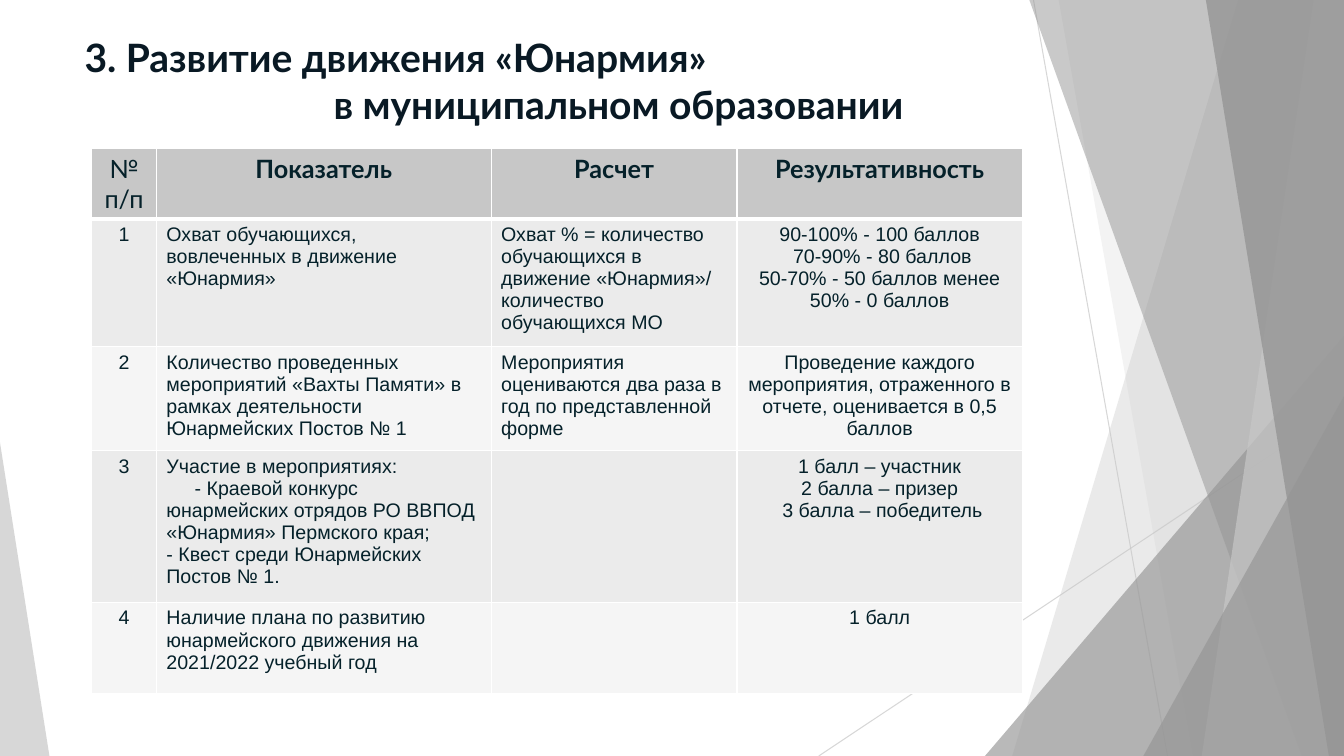
from pptx import Presentation
from pptx.dml.color import RGBColor
from pptx.enum.shapes import MSO_CONNECTOR as Connector, MSO_SHAPE as Shape
from pptx.enum.text import MSO_ANCHOR as Anchor, PP_ALIGN as Align
from pptx.oxml.ns import qn
from pptx.util import Inches, Pt
from lxml.etree import SubElement

LIGHT, DARK, WHITE = "C7C7C7", "959595", "FFFFFF"


def color(code):
    return RGBColor.from_string(code)


class Page:
    """Draws on one slide; all lengths are percentages of its size."""

    title_style = {"font": "Lato", "size": 27.9, "ink": "091924", "bold": True}
    head_style = {"font": "Lato", "size": 18, "ink": "05212A", "bold": True}
    body_style = {"font": "Arial", "size": 14, "ink": "05212A", "bold": False}

    def __init__(self, deck):
        self.width, self.height = deck.slide_width, deck.slide_height
        self.shapes = deck.slides.add_slide(deck.slide_layouts[6]).shapes

    def x(self, share):
        return round(self.width * share / 100)

    def y(self, share):
        return round(self.height * share / 100)

    def box(self, left, top, width, height):
        return self.x(left), self.y(top), self.x(width), self.y(height)

    def fade(self, fill, opacity):
        tint = fill._xPr.find(qn("a:solidFill"))[0]
        SubElement(tint, qn("a:alpha"), val=str(opacity * 1000))

    def paint(self, shape, code, opacity):
        shape.shadow.inherit = False
        shape.fill.solid()
        shape.fill.fore_color.rgb = color(code)
        self.fade(shape.fill, opacity)
        shape.line.fill.background()

    def ray(self, x1, y1, x2, y2):
        line = self.shapes.add_connector(
            Connector.STRAIGHT, self.x(x1), self.y(y1), self.x(x2), self.y(y2))
        line.line.width = Pt(0.75)
        line.line.color.rgb = color(LIGHT)
        self.fade(line.line.fill, 70)
        SubElement(line._element.spPr, qn("a:effectLst"))

    def facet(self, top_left, bottom_left, code, opacity):
        """Full-height panel reaching the right edge of the slide."""
        outline = self.shapes.build_freeform(self.x(top_left), 0)
        outline.add_line_segments([
            (self.width, 0), (self.width, self.height),
            (self.x(bottom_left), self.height)], close=True)
        self.paint(outline.convert_to_shape(), code, opacity)

    def triangle(self, left, top, width, apex, code, opacity):
        """Triangle standing on the bottom edge of the slide."""
        shape = self.shapes.add_shape(
            Shape.ISOSCELES_TRIANGLE, *self.box(left, top, width, 100 - top))
        shape.adjustments[0] = apex
        self.paint(shape, code, opacity)

    def add_lines(self, frame, lines, style, align=Align.LEFT):
        """Each line is a text or a (text, left margin, first-line indent)."""
        for number, line in enumerate(lines):
            text, margin, indent = (line, 0, 0) if isinstance(line, str) else line
            para = frame.add_paragraph() if number else frame.paragraphs[0]
            para.alignment = align
            settings = para._p.get_or_add_pPr()
            settings.set("marL", str(self.x(margin)))
            settings.set("indent", str(self.x(indent)))
            span = para.add_run()
            span.text = text
            span.font.name, span.font.size = style["font"], Pt(style["size"])
            span.font.bold = style["bold"]
            span.font.color.rgb = color(style["ink"])

    def title(self, area, lines):
        frame = self.shapes.add_textbox(*self.box(*area)).text_frame
        frame.word_wrap = True
        frame.vertical_anchor = Anchor.TOP
        self.add_lines(frame, lines, self.title_style)

    def border(self, cell, edges):
        settings = cell._tc.get_or_add_tcPr()
        for side, points in edges.items():
            edge = SubElement(settings, qn(f"a:ln{side}"), w=str(Pt(points)))
            SubElement(SubElement(edge, qn("a:solidFill")), qn("a:srgbClr"), val=WHITE)

    def table(self, left, top, widths, heights, rows):
        table = self.shapes.add_table(
            len(rows), len(widths),
            *self.box(left, top, sum(widths), sum(heights))).table
        table.first_row = table.horz_banding = False
        for column, width in zip(table.columns, widths):
            column.width = self.x(width)
        for row, height in zip(table.rows, heights):
            row.height = self.y(height)

        for r, row in enumerate(rows):
            for c, lines in enumerate(row):
                cell = table.cell(r, c)
                self.border(cell, {"L": 1, "R": 1, "T": 3 if r == 1 else 1,
                                   "B": 3 if r == 0 else 1})
                cell.fill.solid()
                band = "EBEBEB" if r % 2 else "F5F5F5"
                cell.fill.fore_color.rgb = color(band if r else LIGHT)
                style = self.body_style if r else {**self.head_style, "bold": c > 0}
                centred = r == 0 or c in (0, 3)
                self.add_lines(cell.text_frame, lines, style,
                               Align.CENTER if centred else Align.LEFT)


ROWS = [
    [["№ п/п"], ["Показатель"], ["Расчет"], ["Результативность"]],
    [["1"],
     ["Охват обучающихся, вовлеченных в движение «Юнармия»"],
     ["Охват % = количество обучающихся в движение «Юнармия»/ "
      "количество обучающихся МО"],
     ["90-100% - 100 баллов", " 70-90% - 80 баллов",
      "50-70% - 50 баллов менее 50% - 0 баллов"]],
    [["2"],
     ["Количество проведенных мероприятий «Вахты Памяти» в рамках "
      "деятельности Юнармейских Постов № 1"],
     ["Мероприятия оцениваются два раза в год по представленной форме"],
     ["Проведение каждого мероприятия, отраженного в отчете, "
      "оценивается в 0,5 баллов"]],
    [["3"],
     ["Участие в мероприятиях:",
      ("- Краевой конкурс юнармейских отрядов РО ВВПОД «Юнармия» "
       "Пермского края;", 0, 2.1),
      "- Квест среди Юнармейских Постов № 1."],
     [],
     ["1 балл – участник", "2 балла – призер", " 3 балла – победитель"]],
    [["4"],
     ["Наличие плана по развитию юнармейского движения на "
      "2021/2022 учебный год"],
     [], ["1 балл"]],
]


def main():
    deck = Presentation()
    deck.slide_width, deck.slide_height = Inches(13.33), Inches(7.5)
    page = Page(deck)

    # Background facets, back to front
    page.ray(76.9, 0, 86.87, 100)
    page.ray(100, 53.73, 60.92, 100)
    page.facet(92.12, 75.32, LIGHT, 36)
    page.facet(78.77, 88.75, LIGHT, 20)
    page.triangle(73.29, 44.4, 26.71, 1, DARK, 66)
    page.facet(76.59, 96.85, DARK, 50)
    page.facet(97.75, 89.42, LIGHT, 70)
    page.facet(89.72, 98.87, DARK, 80)
    page.triangle(85.07, 52.4, 14.93, 1, DARK, 66)
    page.triangle(0, 58.53, 3.68, 0, LIGHT, 70)

    # Title, second line stepped in
    page.title((5.55, 3.73, 70.52, 11.87),
               ["3. Развитие движения «Юнармия»",
                ("в муниципальном образовании", 18.53, 0)])

    # Indicators table
    page.table(6.83, 19.6, [4.8, 24.91, 18.3, 21.23],
               [9.33, 13.73, 13.73, 20, 12.13], ROWS)

    deck.save("out.pptx")


if __name__ == "__main__":
    main()
